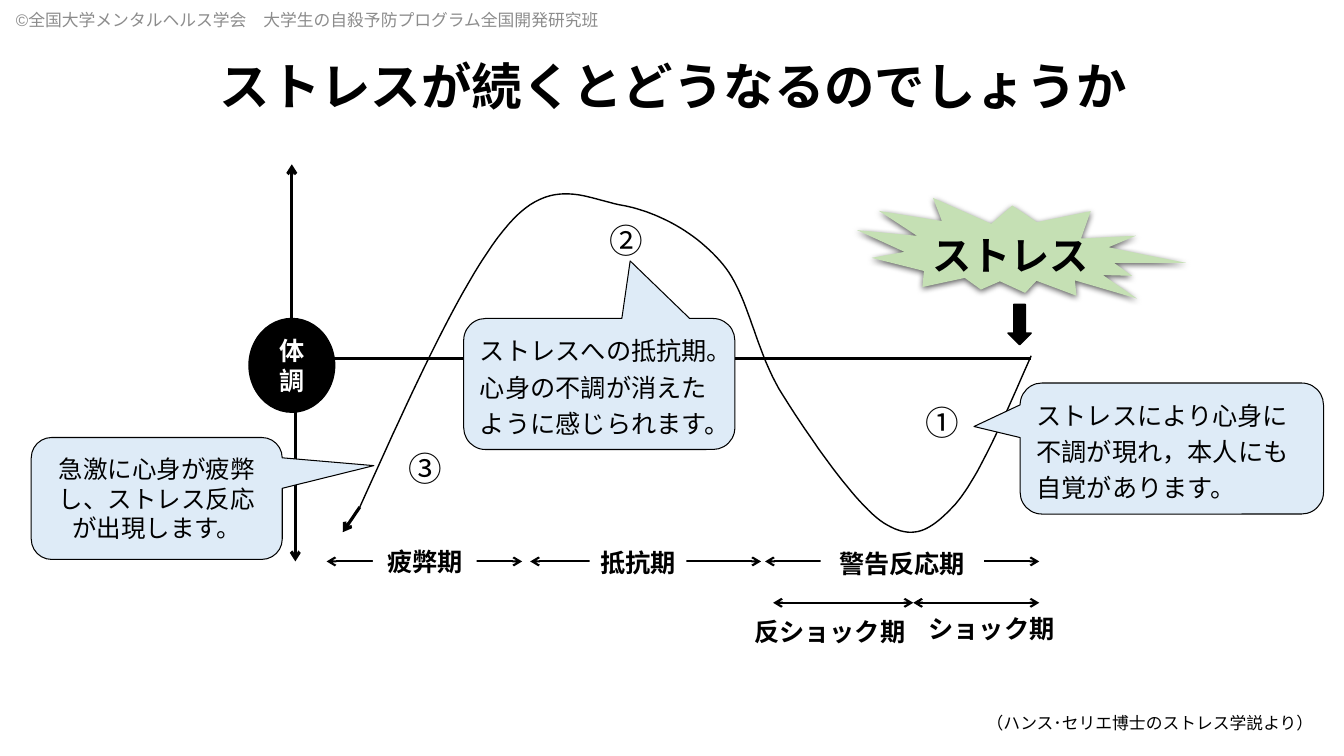
import dataclasses
import typing

import lxml.etree
import pptx
import pptx.dml.color
import pptx.enum.shapes
import pptx.enum.text
import pptx.oxml.ns
import pptx.util

CELL = 0.1  # inches per grid column and row
COLS, ROWS = 133.33, 75
FINE = 100  # freeform steps per cell
FONT = "Noto Sans CJK JP"
BLACK, WHITE, GRAY, BLUE, GREEN = "000000", "FFFFFF", "8C8C8C", "DEEBF7", "C5E0B4"

KIND = pptx.enum.shapes.MSO_SHAPE
ALIGN = pptx.enum.text.PP_ALIGN
ANCHOR = pptx.enum.text.MSO_ANCHOR
Point = tuple[float, float]
Box = tuple[float, float, float, float]


@dataclasses.dataclass
class Note:
    """Text with its box in columns and rows."""
    text: str
    box: Box
    size: float = 18
    bold: bool = False
    color: str = BLACK
    font: str = FONT
    align: typing.Any = ALIGN.LEFT
    middle: bool = False
    wrap: bool = False
    gap: float = 0
    lead: float = 1
    fill: str = ""
    edge: float = 0
    kind: typing.Any = None
    tip: tuple[float, ...] = ()


@dataclasses.dataclass
class Line:
    start: Point
    end: Point
    width: float = 2.25
    head: bool = False
    tail: bool = True


def label(text: str, box: Box, fill: str = WHITE) -> Note:
    return Note(text, box, bold=True, align=ALIGN.CENTER, fill=fill,
                kind=KIND.RECTANGLE if fill else None)


def callout(text: str, box: Box, tip: Point, **more: typing.Any) -> Note:
    return Note(text, box, middle=True, wrap=True, fill=BLUE, edge=0.75,
                kind=KIND.ROUNDED_RECTANGULAR_CALLOUT, tip=(*tip, 0.167), **more)


def span(left: float, right: float, row: float) -> Line:
    """Two-headed line that marks a phase."""
    return Line((left, row), (right, row), 1.5, head=True)


CREDIT = Note("©全国大学メンタルヘルス学会　大学生の自殺予防プログラム全国開発研究班",
              (0.6, 0, 63.8, 4), 12, color=GRAY, font="Arial", middle=True, wrap=True)
TITLE = Note("　ストレスが続くとどうなるのでしょうか", (12, 5, 104.6, 7.1), 36, True,
             font="Arial", align=ALIGN.CENTER, wrap=True)
HEALTH = Note("体調", (24.7, 31.6, 8.5, 9.3), bold=True, color=WHITE, align=ALIGN.CENTER,
              middle=True, wrap=True, fill=BLACK, edge=1, kind=KIND.OVAL)
DROP = Note("", (100, 30.2, 2.3, 4), fill=BLACK, edge=1, kind=KIND.DOWN_ARROW)

AXIS = Line((32.4, 35.6), (102.3, 35.6), tail=False)
RISE = Line((28.95, 31.6), (28.95, 16.3))
FALL = Line((29.3, 40.4), (29.3, 55.7))
FINISH = Line((35.7, 50.3), (34, 52.8))
SPANS = [span(32.4, 51.8, 55.7), span(52.6, 75.5, 55.7), span(75.9, 103.1, 55.7),
         span(76.7, 90.6, 59.8), span(90.6, 103.1, 59.8)]

NOTES = [
    label("疲弊期", (37, 53.7, 10.3, 4.1)),
    label("抵抗期", (58.5, 53.8, 9.6, 4.1)),
    label("警告反応期", (81.4, 53.9, 16.2, 4.1)),
    label("反ショック期", (71.4, 60.7, 21.8, 4)),
    label("ショック期", (88.9, 60.4, 18.9, 4), fill=""),
    Note("ストレス", (91.5, 22.5, 19.4, 5.7), 28, True),
    *(Note(mark, (left, top, 4.8, 5.2), 24) for mark, left, top in
      [("①", 90.8, 39.4), ("②", 59.5, 21.3), ("③", 39.5, 43.9)]),
    Note("（ハンス･セリエ博士のストレス学説より）", (96.9, 70.2, 35.1, 3), 12),
    callout("ストレスにより心身に不調が現れ，本人にも自覚があります。",
            (101.2, 38, 30.1, 13), (-0.652, -0.168), lead=1.2),
    callout("ストレスへの抵抗期。心身の不調が消えたように感じられます。",
            (46, 31.6, 26.9, 13), (0.114, -0.939), lead=1.2),
    callout("急激に心身が疲弊し、ストレス反応が出現します。",
            (3.1, 43.4, 24.9, 12.1), (0.865, -0.269), size=17.5, align=ALIGN.CENTER, gap=10),
]

BURST = [(102.6, 21.9), (107.8, 20.3), (107.1, 23.1), (112.5, 22.3), (109.9, 23.7),
         (113.6, 24.1), (117.7, 24.5), (110.6, 25.2), (112.5, 26.3), (109.6, 26.5),
         (113.2, 28.5), (106.9, 27.3), (107.2, 28.8), (103.1, 27.7), (102.1, 29),
         (99.5, 28.1), (97.7, 29.1), (96, 28.1), (91.9, 29.4), (91.9, 27.8),
         (86.6, 27), (89.8, 26.1), (84.9, 24.4), (90.9, 24.4), (86.9, 22.3),
         (93.2, 22.7), (92.1, 20.5), (98.1, 22.5), (100, 20.5)]
# Start of the curve, then two handles and an end for each bend
WAVE = [(102.3, 35.3),
        (99.7, 41.2), (97.2, 47.2), (94.8, 50), (92.3, 52.7), (90.6, 53.7), (87.7, 51.9),
        (84.9, 50.1), (80.3, 43.4), (77.6, 39.1), (74.9, 34.8), (74.3, 29.3), (71.7, 26.2),
        (69.1, 23.1), (65.4, 21.1), (61.9, 20.4), (58.3, 19.8), (54.8, 17.3), (50.5, 22.2),
        (46.1, 27.2), (40.9, 38.8), (35.7, 50.3)]


def cells(count: float) -> int:
    return pptx.util.Inches(count * CELL)


def rgb(color: str) -> pptx.dml.color.RGBColor:
    return pptx.dml.color.RGBColor.from_string(color)


def add(parent: typing.Any, tag: str, **attrs: str) -> typing.Any:
    return lxml.etree.SubElement(parent, pptx.oxml.ns.qn(tag), attrs)


def paint(shape: typing.Any, fill: str, edge: float) -> None:
    shape.shadow.inherit = False
    if fill:
        shape.fill.solid()
        shape.fill.fore_color.rgb = rgb(fill)
    else:
        shape.fill.background()
    if edge:
        shape.line.color.rgb = rgb(BLACK)
        shape.line.width = pptx.util.Pt(edge)
    else:
        shape.line.fill.background()


def write(shapes: typing.Any, note: Note) -> typing.Any:
    place = [cells(side) for side in note.box]
    if note.kind is None:
        shape = shapes.add_textbox(*place)
    else:
        shape = shapes.add_shape(note.kind, *place)
        paint(shape, note.fill, note.edge)
    for rank, value in enumerate(note.tip):
        shape.adjustments[rank] = value
    if not note.text:
        return shape
    frame = shape.text_frame
    frame.word_wrap = note.wrap
    frame.vertical_anchor = ANCHOR.MIDDLE if note.middle else ANCHOR.TOP
    para = frame.paragraphs[0]
    para.text = note.text
    para.alignment = note.align
    para.line_spacing = note.lead
    para.space_before = pptx.util.Pt(note.gap)
    font = para.font
    font.size, font.bold, font.name = pptx.util.Pt(note.size), note.bold, note.font
    font.color.rgb = rgb(note.color)
    add(para._p.pPr.find(pptx.oxml.ns.qn("a:defRPr")), "a:ea", typeface=FONT)
    return shape


def draw(shapes: typing.Any, line: Line) -> typing.Any:
    ends = [cells(side) for side in (*line.start, *line.end)]
    link = shapes.add_connector(pptx.enum.shapes.MSO_CONNECTOR.STRAIGHT, *ends)
    link.line.color.rgb = rgb(BLACK)
    link.line.width = pptx.util.Pt(line.width)
    for shown, tag in ((line.head, "a:headEnd"), (line.tail, "a:tailEnd")):
        if shown:
            add(link.line._ln, tag, type="arrow")
    add(link._element.spPr, "a:effectLst")
    return link


def trace(shapes: typing.Any, points: list[Point], close: bool) -> typing.Any:
    dots = [(x * FINE, y * FINE) for x, y in points]
    pen = shapes.build_freeform(*dots[0], scale=cells(1) / FINE)
    pen.add_line_segments(dots[1:], close=close)
    return pen.convert_to_shape()


def bend(knots: list[Point], steps: int = 24) -> list[Point]:
    """Points along a chain of cubic Bézier curves."""
    points = [knots[0]]
    for first in range(0, len(knots) - 1, 3):
        quad = knots[first:first + 4]
        for step in range(1, steps + 1):
            t = step / steps
            shares = ((1 - t) ** 3, 3 * t * (1 - t) ** 2, 3 * t * t * (1 - t), t ** 3)
            points.append((sum(s * x for s, (x, _) in zip(shares, quad)),
                           sum(s * y for s, (_, y) in zip(shares, quad))))
    return points


def main() -> None:
    deck = pptx.Presentation()
    deck.slide_width, deck.slide_height = cells(COLS), cells(ROWS)
    shapes = deck.slides.add_slide(deck.slide_layouts[6]).shapes
    write(shapes, CREDIT)
    write(shapes, TITLE)

    burst = trace(shapes, BURST, close=True)
    paint(burst, GREEN, 0)
    burst.rotation = 5.5
    glow = add(burst._element.spPr.find(pptx.oxml.ns.qn("a:effectLst")), "a:outerShdw",
               blurRad="57150", dist="19050", dir="5400000", algn="ctr", rotWithShape="0")
    add(add(glow, "a:srgbClr", val=BLACK), "a:alpha", val="63000")

    draw(shapes, AXIS)
    health = write(shapes, HEALTH)
    draw(shapes, RISE).begin_connect(health, 0)
    draw(shapes, FALL)
    paint(trace(shapes, bend(WAVE), close=False), "", 1)
    draw(shapes, FINISH)
    write(shapes, DROP)
    for line in SPANS:
        draw(shapes, line)
    for note in NOTES:
        write(shapes, note)
    deck.save("out.pptx")


if __name__ == "__main__":
    main()
